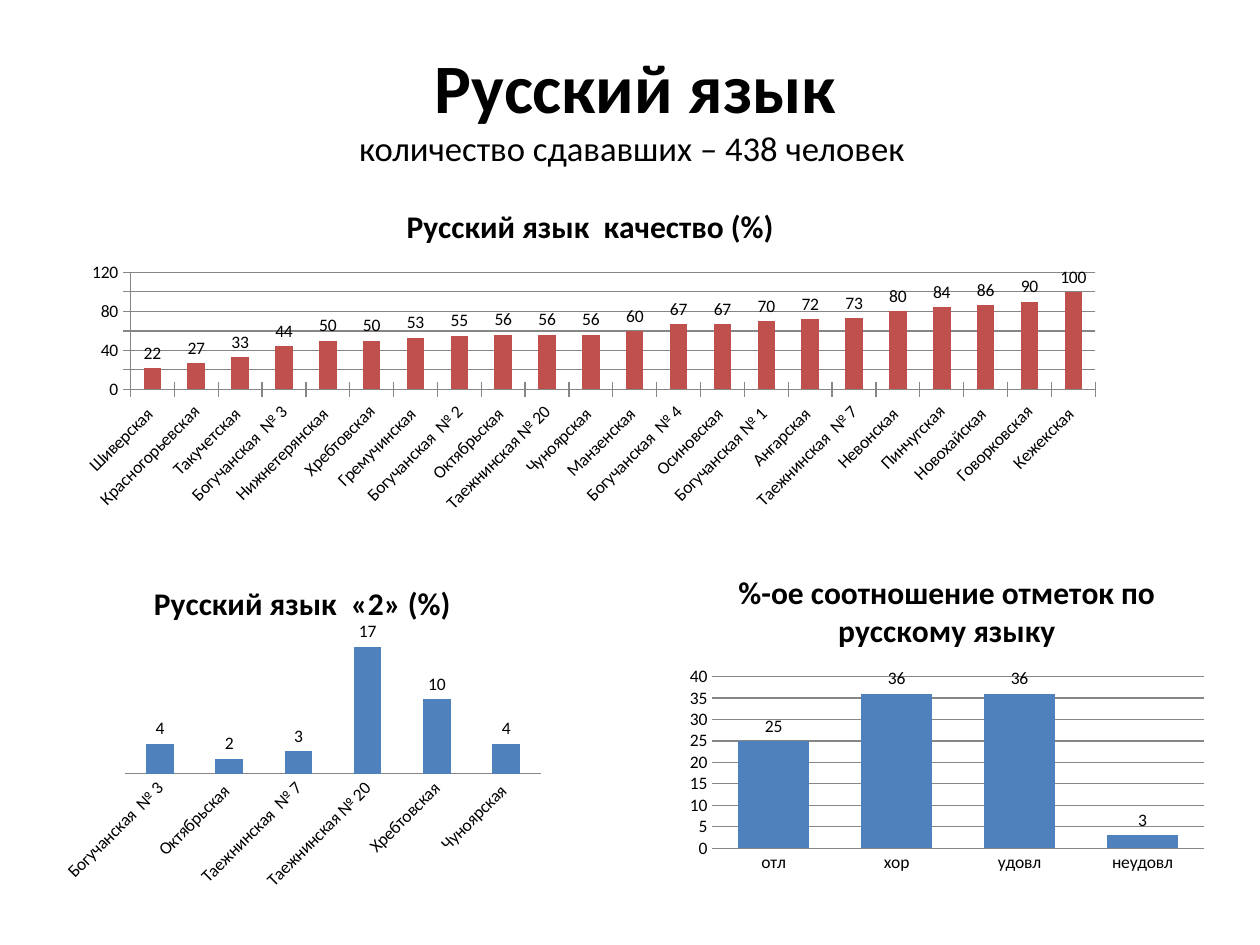
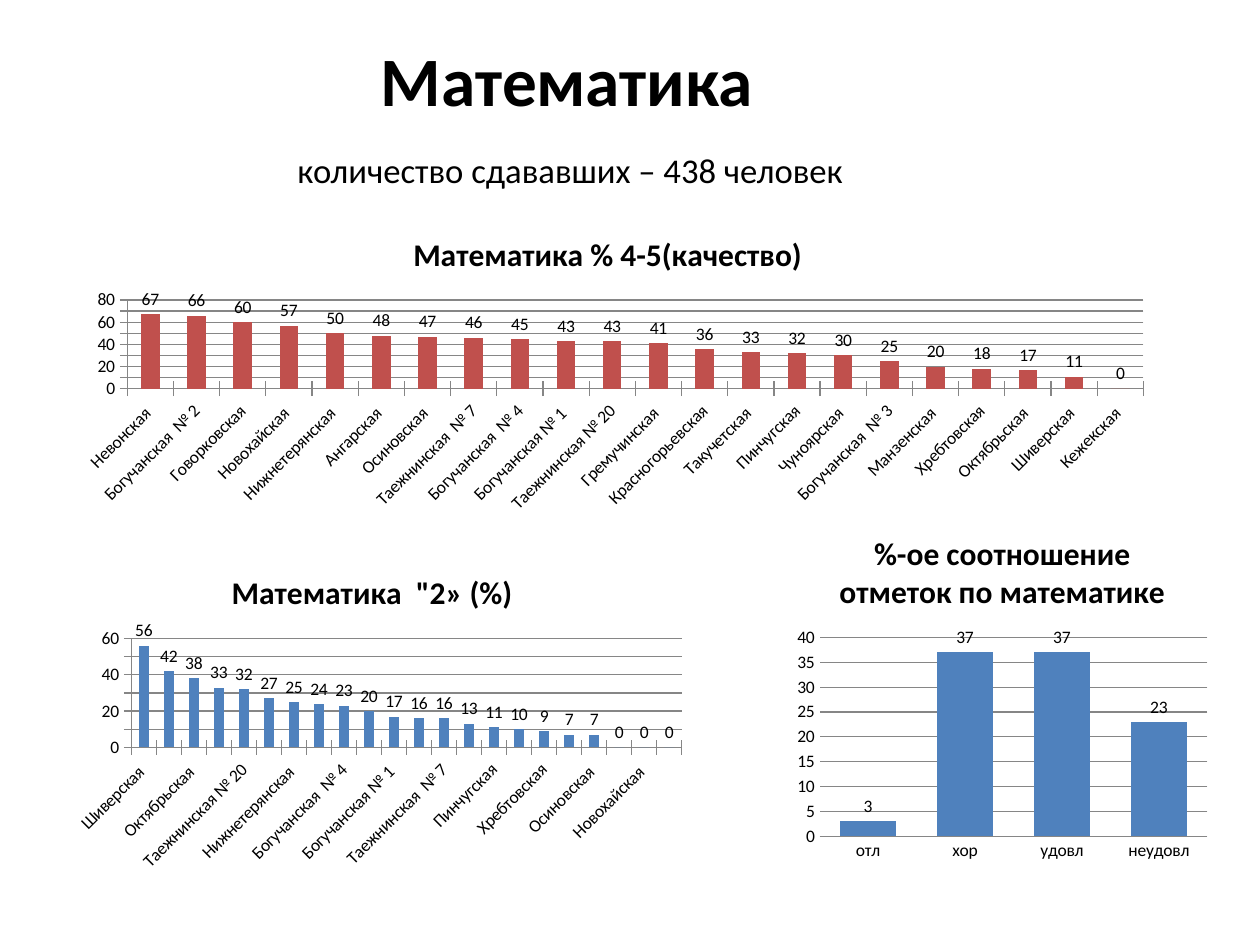
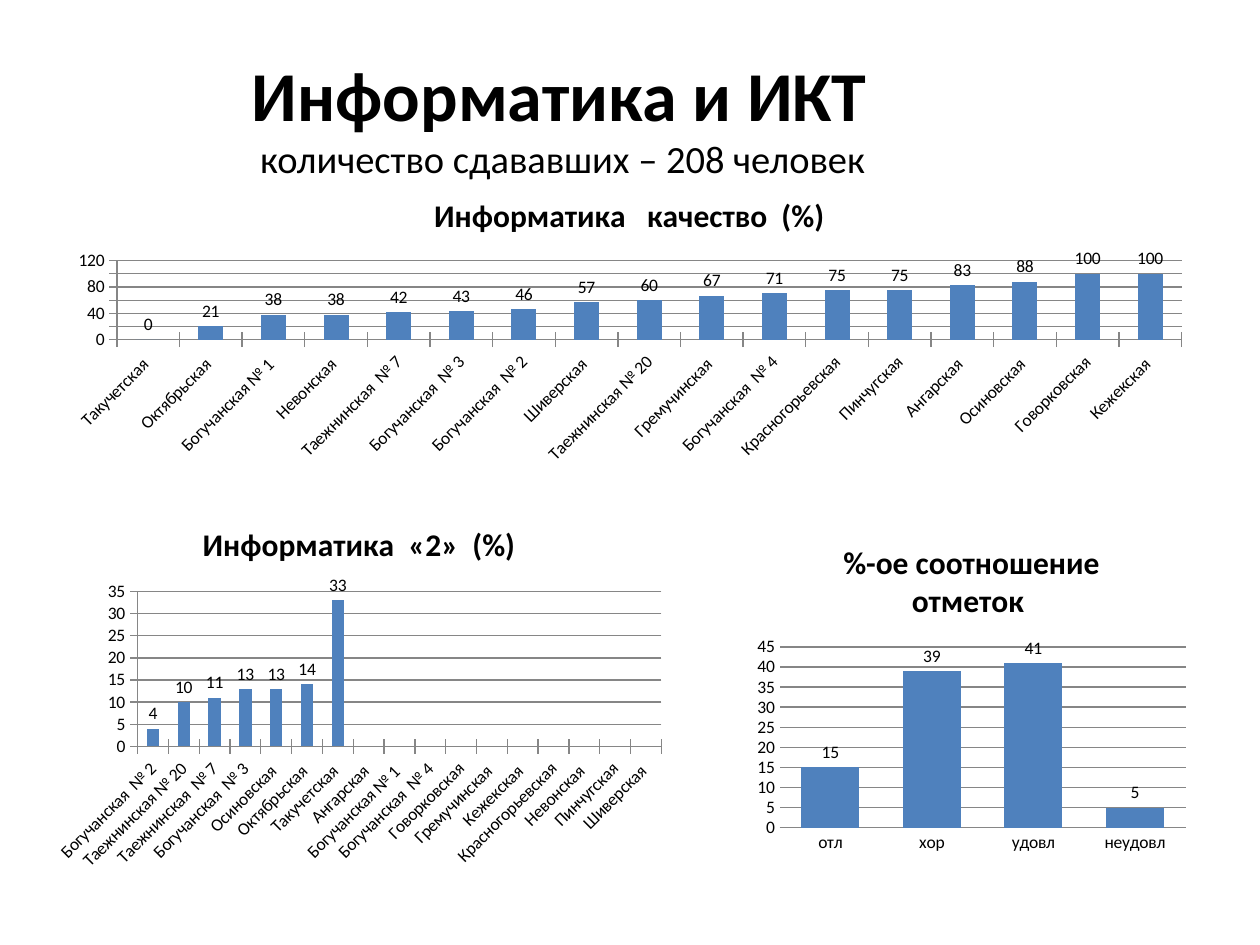
"""Builds three slides of exam results, each with a heading and three column charts."""
from pptx import Presentation
from pptx import util as u
from pptx.chart.data import CategoryChartData
from pptx.dml.color import RGBColor
from pptx.enum import chart as kinds
from pptx.enum import text

COLORS = {"ink": "000000", "line": "868686", "blue": "4F81BD", "red": "C0504D"}
FONT = "Calibri"
MARKS = ["отл", "хор", "удовл", "неудовл"]
WIDE = (0, 0.3, 9, 1.25)

STYLES = {
    "schools": {"gap": 150, "overlap": 0, "tick": "CROSS", "turn": -45, "scale": True, "line": True},
    "failed": {"gap": 150, "overlap": -25, "tick": "NONE", "turn": -45, "scale": False, "line": True},
    "marks": {"gap": 75, "overlap": -25, "tick": "NONE", "turn": 0, "scale": True, "line": False},
}

SLIDES = [
    {
        "heading": (2.09, 0.3, 5.91, 1.09),
        "lines": [[("Русский язык", 39.6, True)],
                  [("количество сдававших – 438 человек ", 19.8, False)]],
        "charts": [
            {"title": "Русский язык  качество (%)", "at": (0.51, 1.47, 8.35, 2.68),
             "style": "schools", "color": "red", "top": 120, "step": 20,
             "names": ["Шиверская ", " Красногорьевская", "Такучетская ", "Богучанская  № 3",
                       "Нижнетерянская ", "Хребтовская", "Гремучинская ", "Богучанская  № 2",
                       "Октябрьская ", " Таежнинская № 20", "Чуноярская ", "Манзенская ",
                       "Богучанская  № 4", "Осиновская ", "Богучанская № 1 ", " Ангарская ",
                       "Таежнинская  № 7", "Невонская ", "Пинчугская", "Новохайская ",
                       "Говорковская", "Кежекская "],
             "values": [22, 27, 33, 44, 50, 50, 53, 55, 56, 56, 56, 60, 67, 67, 70, 72, 73,
                        80, 84, 86, 90, 100]},
            {"title": "Русский язык  «2» (%)", "at": (0.43, 4.46, 3.94, 2.68),
             "style": "failed", "color": "blue", "top": 18, "step": 2,
             "names": ["Богучанская  № 3", "Октябрьская ", "Таежнинская  № 7",
                       " Таежнинская № 20", "Хребтовская", "Чуноярская "],
             "values": [4, 2, 3, 17, 10, 4]},
            {"title": "%-ое соотношение отметок по русскому языку", "at": (5.39, 4.38, 4.25, 2.6),
             "style": "marks", "color": "blue", "top": 40, "step": 5,
             "names": MARKS, "values": [25, 36, 36, 3]},
        ],
    },
    {
        "heading": WIDE,
        "lines": [[("Математика", 39.6, True)],
                  [(" ", 36, False), ("количество сдававших – 438 человек ", 19.8, False)]],
        "charts": [
            {"title": "Математика % 4-5(качество)  ", "at": (0.51, 1.7, 8.74, 2.44),
             "style": "schools", "color": "red", "top": 80, "step": 10,
             "names": ["Невонская ", "Богучанская  № 2", "Говорковская", "Новохайская ",
                       "Нижнетерянская ", " Ангарская ", "Осиновская ", "Таежнинская  № 7",
                       "Богучанская  № 4", "Богучанская № 1 ", " Таежнинская № 20",
                       "Гремучинская ", " Красногорьевская", "Такучетская ", "Пинчугская",
                       "Чуноярская ", "Богучанская  № 3", "Манзенская ", "Хребтовская",
                       "Октябрьская ", "Шиверская ", "Кежекская "],
             "values": [67, 66, 60, 57, 50, 48, 47, 46, 45, 43, 43, 41, 36, 33, 32, 30, 25,
                        20, 18, 17, 11, 0]},
            {"title": "Математика  \"2» (%)  ", "at": (0.51, 4.38, 5, 2.61),
             "style": "schools", "color": "blue", "top": 60, "step": 10,
             "names": ["Шиверская ", "Богучанская  № 3", "Октябрьская ", "Чуноярская ",
                       " Таежнинская № 20", " Красногорьевская", "Нижнетерянская ",
                       "Гремучинская ", "Богучанская  № 4", "Манзенская ", "Богучанская № 1 ",
                       " Ангарская ", "Таежнинская  № 7", "Богучанская  № 2", "Пинчугская",
                       "Говорковская", "Хребтовская", "Невонская ", "Осиновская ",
                       "Кежекская ", "Новохайская ", "Такучетская "],
             "values": [56, 42, 38, 33, 32, 27, 25, 24, 23, 20, 17, 16, 16, 13, 11, 10, 9,
                        7, 7, 0, 0, 0]},
            {"title": "%-ое соотношение отметок по математике", "at": (6.26, 4.06, 3.39, 2.83),
             "style": "marks", "color": "blue", "top": 40, "step": 5,
             "names": MARKS, "values": [3, 37, 37, 23]},
        ],
    },
    {
        "heading": WIDE,
        "lines": [[("Информатика и ИКТ ", 40, True)],
                  [("количество сдававших – 208 человек ", 22, False)]],
        "charts": [
            {"title": "Информатика   качество  (%)", "at": (0.43, 1.39, 9.13, 2.36),
             "style": "schools", "color": "blue", "top": 120, "step": 20,
             "names": ["Такучетская ", "Октябрьская ", "Богучанская № 1 ", "Невонская ",
                       "Таежнинская  № 7", "Богучанская  № 3", "Богучанская  № 2",
                       "Шиверская ", " Таежнинская № 20", "Гремучинская ",
                       "Богучанская  № 4", " Красногорьевская", "Пинчугская", " Ангарская ",
                       "Осиновская ", "Говорковская", "Кежекская "],
             "values": [0, 21, 38, 38, 42, 43, 46, 57, 60, 67, 71, 75, 75, 83, 88, 100, 100]},
            {"title": "Информатика  «2»  (%)", "at": (0.35, 3.99, 5, 3),
             "style": "schools", "color": "blue", "top": 35, "step": 5,
             "names": ["Богучанская  № 2", " Таежнинская № 20", "Таежнинская  № 7",
                       "Богучанская  № 3", "Осиновская ", "Октябрьская ", "Такучетская ",
                       " Ангарская ", "Богучанская № 1 ", "Богучанская  № 4", "Говорковская",
                       "Гремучинская ", "Кежекская ", " Красногорьевская", "Невонская ",
                       "Пинчугская", "Шиверская "],
             "values": [4, 10, 11, 13, 13, 14, 33] + [None] * 10},
            {"title": "%-ое соотношение отметок ", "at": (5.94, 4.14, 3.54, 2.68),
             "style": "marks", "color": "blue", "top": 45, "step": 5,
             "names": MARKS, "values": [15, 39, 41, 5]},
        ],
    },
]


def color(name):
    return RGBColor.from_string(COLORS[name])


def assign(target, **values):
    for name, value in values.items():
        setattr(target, name, value)


def set_font(font, size, bold):
    assign(font, name=FONT, size=u.Pt(size), bold=bold)
    font.color.rgb = color("ink")


def set_line(line):
    line.color.rgb = color("line")
    line.width = u.Pt(0.75)


def add_heading(page, place, lines):
    box = page.shapes.add_textbox(*map(u.Inches, place))
    assign(box.text_frame, word_wrap=True, vertical_anchor=text.MSO_ANCHOR.MIDDLE)
    para = box.text_frame.paragraphs[0]
    para.alignment = text.PP_ALIGN.CENTER
    for number, spans in enumerate(lines):
        if number:
            para.add_line_break()
        for words, size, bold in spans:
            span = para.add_run()
            span.text = words
            set_font(span.font, size, bold)


def style_axes(chart, style, top, step):
    ticks = kinds.XL_TICK_MARK
    names, values = chart.category_axis, chart.value_axis
    for axis in (names, values):
        assign(axis, major_tick_mark=ticks[style["tick"]], minor_tick_mark=ticks.NONE)
        set_font(axis.tick_labels.font, 10, False)
        set_line(axis.format.line)
    names._element.txPr.bodyPr.set("rot", str(style["turn"] * 60000))
    assign(values, minimum_scale=0, maximum_scale=top, major_unit=step,
           visible=style["scale"], has_major_gridlines=style["scale"])
    if style["scale"]:
        set_line(values.major_gridlines.format.line)
    if not style["line"]:
        values.format.line.fill.background()


def add_column_chart(page, item):
    style = STYLES[item["style"]]
    data = CategoryChartData()
    data.categories = item["names"]
    data.add_series("Series 1", item["values"])
    chart = page.shapes.add_chart(kinds.XL_CHART_TYPE.COLUMN_CLUSTERED,
                                  *map(u.Inches, item["at"]), data).chart
    set_font(chart.font, 10, False)
    assign(chart, has_legend=False, has_title=True)
    title = chart.chart_title.text_frame
    title.text = item["title"]
    set_font(title.paragraphs[0].runs[0].font, 18, True)
    plot = chart.plots[0]
    assign(plot, gap_width=style["gap"], overlap=style["overlap"],
           vary_by_categories=False, has_data_labels=True)
    assign(plot.data_labels, show_value=True, position=kinds.XL_LABEL_POSITION.OUTSIDE_END)
    set_font(plot.data_labels.font, 10, False)
    fill = plot.series[0].format.fill
    fill.solid()
    fill.fore_color.rgb = color(item["color"])
    style_axes(chart, style, item["top"], item["step"])


def main():
    deck = Presentation()
    assign(deck, slide_width=u.Inches(10), slide_height=u.Inches(7.5))
    for content in SLIDES:
        page = deck.slides.add_slide(deck.slide_layouts[6])
        add_heading(page, content["heading"], content["lines"])
        for item in content["charts"]:
            add_column_chart(page, item)
    deck.save("out.pptx")


if __name__ == "__main__":
    main()
